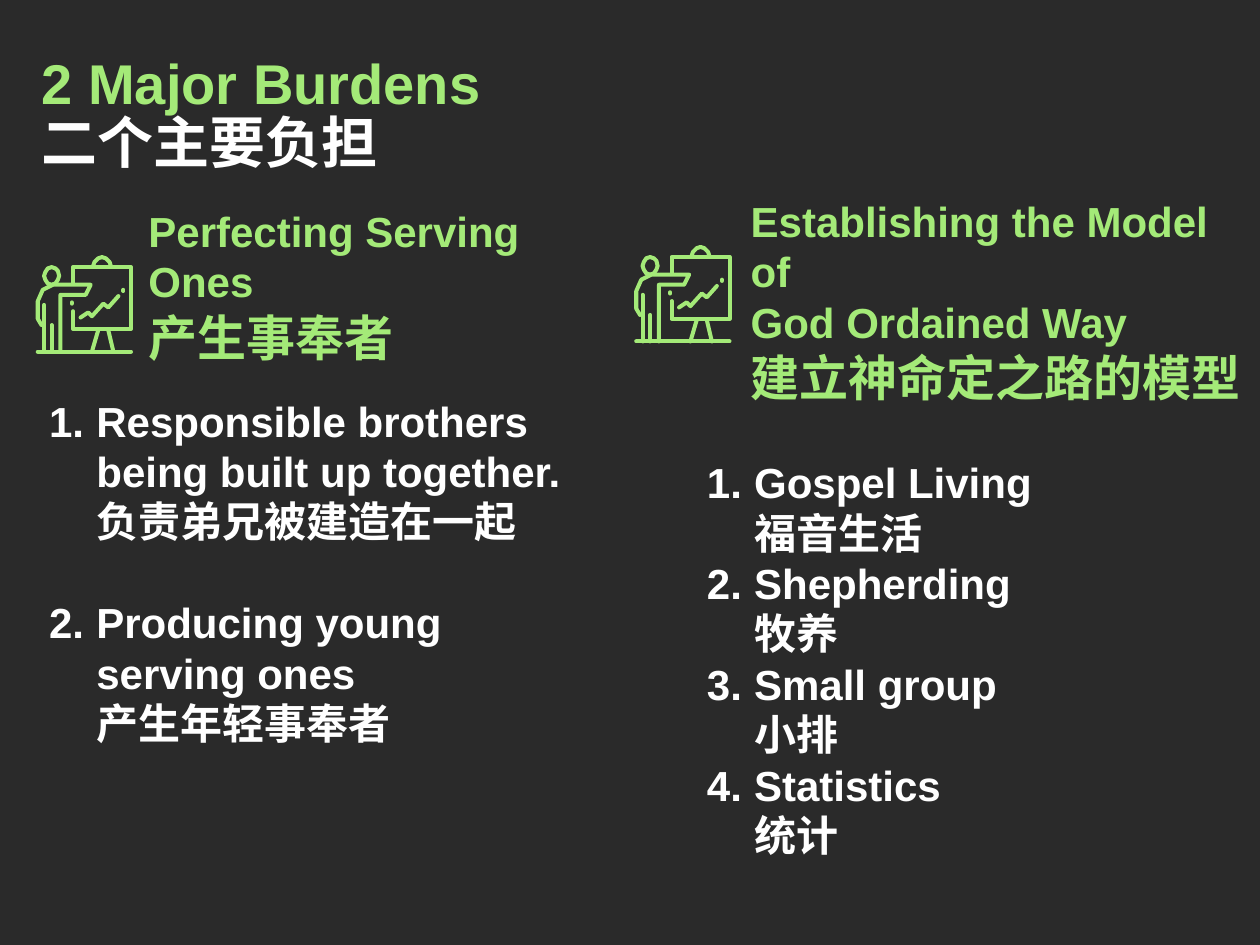
from math import cos, pi, sin
from pptx import Presentation
from pptx.dml.color import RGBColor
from pptx.enum.text import MSO_ANCHOR, MSO_AUTO_SIZE, PP_ALIGN
from pptx.oxml.ns import qn
from pptx.util import Pt
from lxml.etree import SubElement

HUES = {"dark": "2A2A2A", "lime": "A4EA78", "white": "FFFFFF"}
LATIN, HAN = "Arial", "Noto Sans CJK SC"

head = [(13 + 6 * cos(pi * k / 6), 17 + 7 * sin(pi * k / 6)) for k in range(13)]
arch = [(53 - 7 * cos(pi * k / 6), 9 - 7 * sin(pi * k / 6)) for k in range(7)]
board = [(30, 23), (30, 10), (76, 10), (76, 59), (30, 59), (30, 45)]
body = [(5, 56), (2, 51), (2, 37), (6, 28), (14, 24), (44, 24), (40, 32),
        (20, 32), (20, 77)]
chart = [(36, 50), (42, 46), (45, 49), (54, 39), (58, 42), (66, 33)]
legs = [[(x, y), (foot, 77)] for x, y, foot in
        [(7, 40, 7), (13, 56, 13), (50, 60, 45), (58, 60, 62), (2, 77, 76)]]
dots = [[(x, y), (x, y + 1)] for x, y in [(29, 38), (70, 28)]]
ICON = [head, arch, board, body, chart] + legs + dots


def place(shape, box, form):
    for name, size in zip(("left", "top", "width", "height"), box):
        setattr(shape, name, Pt(size))
    for name, value in form.items():
        setattr(shape.text_frame, name, value)


def write(para, lines, size, hues, pitch):
    para.line_spacing = Pt(pitch)
    for row, line in enumerate(lines):
        if row:
            para.add_line_break()
        run = para.add_run()
        run.text = line
        face = LATIN if line.isascii() else HAN
        for name, value in {"name": face, "size": Pt(size), "bold": True}.items():
            setattr(run.font, name, value)
        run.font.color.rgb = RGBColor.from_string(HUES[hues[row % len(hues)]])
        SubElement(run.font._element, qn("a:ea"), typeface=face)


deck = Presentation()
deck.slide_width, deck.slide_height = Pt(720), Pt(540)
slide = deck.slides.add_slide(deck.slide_layouts[5])
slide.background.fill.solid()
slide.background.fill.fore_color.rgb = RGBColor.from_string(HUES["dark"])

edges = ("margin_left", "margin_top", "margin_right", "margin_bottom")
title = slide.shapes.title
place(title, (20.16, 24.48, 303.84, 83.52), {
    **dict.fromkeys(edges, Pt(3.6)), "word_wrap": True,
    "vertical_anchor": MSO_ANCHOR.MIDDLE, "auto_size": MSO_AUTO_SIZE.NONE})
para = title.text_frame.paragraphs[0]
para.alignment = PP_ALIGN.LEFT
write(para, ["2 Major Burdens", "二个主要负担"], 32, ["lime", "white"], 33.6)

LISTS = [
    ((25.2, 221.76, 312.48, 209.52), 28.8, [
        ["Responsible brothers ", "being built up together.", "负责弟兄被建造在一起"],
        ["Producing young serving ones", "产生年轻事奉者"]]),
    ((401.04, 257.04, 195.12, 238.32), 0, [
        ["Gospel Living", "福音生活"], ["Shepherding", "牧养"],
        ["Small group", "小排"], ["Statistics", "统计"]]),
]
form = {**dict.fromkeys(edges, Pt(2.88)), "word_wrap": True,
        "vertical_anchor": MSO_ANCHOR.MIDDLE,
        "auto_size": MSO_AUTO_SIZE.SHAPE_TO_FIT_TEXT}
for box, gap, items in LISTS:
    shape = slide.shapes.add_textbox(0, 0, 0, 0)
    place(shape, box, form)
    frame = shape.text_frame
    for row, lines in enumerate(items):
        para = frame.add_paragraph() if row else frame.paragraphs[0]
        write(para, lines, 24, ["white"], 28.8)
        para.space_before = Pt(gap if row else 0)
        props = para._p.get_or_add_pPr()
        props.set("marL", str(Pt(27)))
        props.set("indent", str(Pt(-27)))
        SubElement(props, qn("a:buFont"), typeface=LATIN)
        SubElement(props, qn("a:buAutoNum"), type="arabicPeriod")

HEADS = [
    ((77.76, 113.76, 283.68, 99.36), (20.16, 145.44),
     ["Perfecting Serving Ones"], "产生事奉者"),
    ((421.92, 108, 298.08, 128.16), (362.16, 139.68),
     ["Establishing the Model of ", "God Ordained Way"], "建立神命定之路的模型"),
]
for box, spot, lines, han in HEADS:
    group = slide.shapes.add_group_shape()
    pen = group.shapes.build_freeform(*ICON[0][0], scale=Pt(0.72))
    for stroke in ICON:
        pen.move_to(*stroke[0])
        pen.add_line_segments(stroke[1:], close=False)
    icon = pen.convert_to_shape(*map(Pt, spot))
    icon.shadow.inherit = False
    icon.fill.background()
    icon.line.color.rgb = RGBColor.from_string(HUES["lime"])
    icon.line.width = Pt(2.3)
    edge = icon._element.spPr.find(qn("a:ln"))
    edge.set("cap", "rnd")
    SubElement(edge, qn("a:round"))
    shape = group.shapes.add_textbox(*map(Pt, box))
    frame = shape.text_frame
    frame.word_wrap = True
    frame.auto_size = MSO_AUTO_SIZE.SHAPE_TO_FIT_TEXT
    write(frame.paragraphs[0], lines, 24, ["lime"], 28.8)
    write(frame.add_paragraph(), [han], 28, ["lime"], 34.5)

deck.save("out.pptx")
